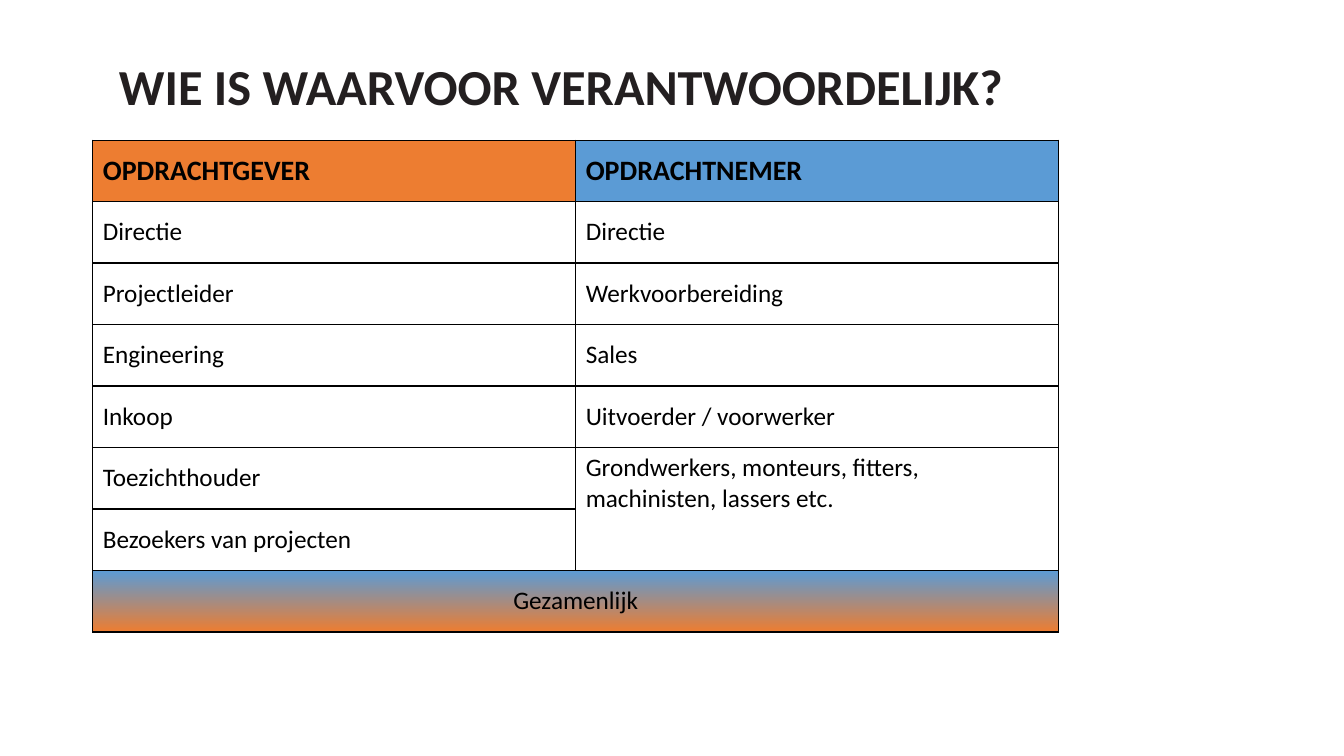
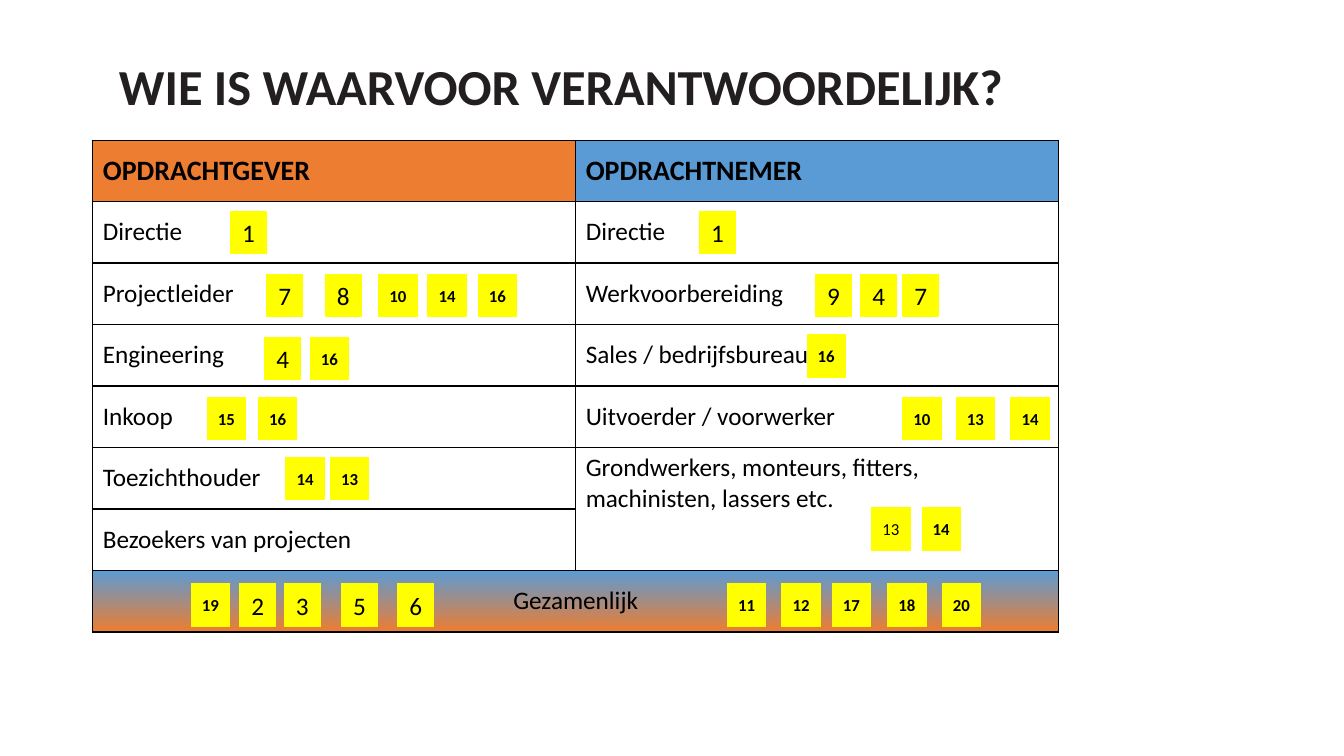
"""Build two slides that show who is responsible for what."""
from dataclasses import dataclass

from lxml import etree
from pptx import Presentation, slide as sl, table as tb, util as u
from pptx.dml.color import RGBColor
from pptx.enum import shapes, text
from pptx.oxml import ns
from pptx.text import text as tx

WIDE, HIGH = 13.33, 7.5
LEFT, TOP = 0.92, 1.39
COL, ROW = 0.479, 0.61
SPAN = 10
FONT = "Calibri"
TITLE = "WIE IS WAARVOOR VERANTWOORDELIJK?"
ORANGE = RGBColor(0xED, 0x7D, 0x31)
BLUE = RGBColor(0x5B, 0x9B, 0xD5)
YELLOW = RGBColor(0xFF, 0xFF, 0x00)
BLACK = RGBColor(0x00, 0x00, 0x00)
INK = RGBColor(0x23, 0x1F, 0x20)


@dataclass(frozen=True)
class Badge:
    """A numbered marker on the table grid."""
    num: int
    col: float
    row: float
    plain: bool = False


def line(row: float, *marks: tuple[int, float]) -> list[Badge]:
    """Make the badges that share one row."""
    return [Badge(num, col, row) for num, col in marks]


BADGES = [
    *line(1.15, (1, 2.84), (1, 12.55)),
    *line(2.18, (7, 3.59), (8, 4.8), (10, 5.91), (14, 6.93), (16, 7.97),
          (9, 14.95), (4, 15.89), (7, 16.76)),
    *line(3.2, (4, 3.55), (16, 4.49)),
    *line(3.16, (16, 14.78)),
    *line(4.18, (15, 2.36), (16, 3.42), (10, 16.76), (13, 17.87), (14, 19)),
    *line(5.15, (14, 3.99), (13, 4.91)),
    Badge(13, 16.12, 5.97, plain=True),
    *line(5.97, (14, 17.16)),
    *line(7.21, (19, 2.03), (2, 3.03), (3, 3.95), (5, 5.14), (6, 6.3),
          (11, 13.13), (12, 14.26), (17, 15.3), (18, 16.45), (20, 17.58)),
]


def roles(sales: str) -> list[tuple[str, str]]:
    """List the table rows, with the given name for sales."""
    return [
        ("OPDRACHTGEVER", "OPDRACHTNEMER"),
        ("Directie", "Directie"),
        ("Projectleider", "Werkvoorbereiding"),
        ("Engineering", sales),
        ("Inkoop", "Uitvoerder / voorwerker"),
        ("Toezichthouder",
         "Grondwerkers, monteurs, fitters, machinisten, lassers etc."),
        ("Bezoekers van projecten", ""),
        ("Gezamenlijk", ""),
    ]


def write(para: tx._Paragraph, words: str, size: int,
          bold: bool = False, tint: RGBColor = BLACK) -> None:
    """Add one formatted run to a paragraph."""
    run = para.add_run()
    run.text = words
    font = run.font
    font.name, font.size, font.bold = FONT, u.Pt(size), bold
    font.color.rgb = tint


def head(page: sl.Slide) -> None:
    """Place and fill the title."""
    box = page.shapes.title
    box.left, box.top = u.Inches(1.08), u.Inches(0.38)
    box.width, box.height = u.Inches(10.48), u.Inches(1.01)
    frame = box.text_frame
    frame.auto_size = text.MSO_AUTO_SIZE.NONE
    frame.vertical_anchor = text.MSO_ANCHOR.MIDDLE
    para = frame.paragraphs[0]
    para.alignment = text.PP_ALIGN.LEFT
    para.line_spacing = 0.9
    write(para, TITLE, 36, True, INK)


def edge(cell: tb._Cell) -> None:
    """Draw thin black borders round a cell."""
    props = cell._tc.get_or_add_tcPr()
    for side in ("lnL", "lnR", "lnT", "lnB"):
        rule = etree.SubElement(props, ns.qn(f"a:{side}"), w=str(u.Pt(1)))
        fill = etree.SubElement(rule, ns.qn("a:solidFill"))
        etree.SubElement(fill, ns.qn("a:srgbClr"), val=str(BLACK))


def blend(cell: tb._Cell) -> None:
    """Fill a cell from orange at the foot to blue at the top."""
    cell.fill.gradient()
    cell.fill.gradient_angle = 90
    for stop, tint in zip(cell.fill.gradient_stops, (ORANGE, BLUE)):
        stop.color.rgb = tint


def grid(page: sl.Slide, rows: list[tuple[str, str]]) -> None:
    """Draw the table of roles."""
    last = len(rows) - 1
    table = page.shapes.add_table(
        len(rows), 2, u.Inches(LEFT), u.Inches(TOP),
        u.Inches(2 * SPAN * COL), u.Inches(len(rows) * ROW)).table
    table.first_row = table.horz_banding = False
    for band in table.rows:
        band.height = u.Inches(ROW)
    for y, pair in enumerate(rows):
        for x, words in enumerate(pair):
            cell = table.cell(y, x)
            edge(cell)
            cell.vertical_anchor = text.MSO_ANCHOR.MIDDLE
            if y == 0:
                cell.fill.solid()
                cell.fill.fore_color.rgb = (ORANGE, BLUE)[x]
            elif y == last:
                blend(cell)
            else:
                cell.fill.background()
            if words:
                write(cell.text_frame.paragraphs[0], words,
                      18 if y else 20, y == 0)
    crew = table.cell(last - 2, 1)
    crew.vertical_anchor = text.MSO_ANCHOR.TOP
    crew.merge(table.cell(last - 1, 1))
    joint = table.cell(last, 0)
    joint.merge(table.cell(last, 1))
    joint.text_frame.paragraphs[0].alignment = text.PP_ALIGN.CENTER


def stamp(page: sl.Slide, badge: Badge) -> None:
    """Draw one yellow badge."""
    small = badge.num > 9
    box = page.shapes.add_shape(
        shapes.MSO_SHAPE.FLOWCHART_PROCESS,
        u.Inches(LEFT + badge.col * COL), u.Inches(TOP + badge.row * ROW),
        u.Inches(0.39 if small else 0.37), u.Inches(0.43))
    box.shadow.inherit = False
    box.fill.solid()
    box.fill.fore_color.rgb = YELLOW
    box.line.fill.background()
    frame = box.text_frame
    frame.margin_left = frame.margin_right = 0
    frame.vertical_anchor = text.MSO_ANCHOR.MIDDLE
    para = frame.paragraphs[0]
    para.alignment = text.PP_ALIGN.CENTER
    write(para, str(badge.num), 12 if small else 18,
          small and not badge.plain)


def main() -> None:
    """Build and save the deck."""
    deck = Presentation()
    deck.slide_width, deck.slide_height = u.Inches(WIDE), u.Inches(HIGH)
    for sales, badges in (("Sales", []), ("Sales / bedrijfsbureau", BADGES)):
        page = deck.slides.add_slide(deck.slide_layouts[5])
        head(page)
        grid(page, roles(sales))
        for badge in badges:
            stamp(page, badge)
    deck.save("out.pptx")


if __name__ == "__main__":
    main()
